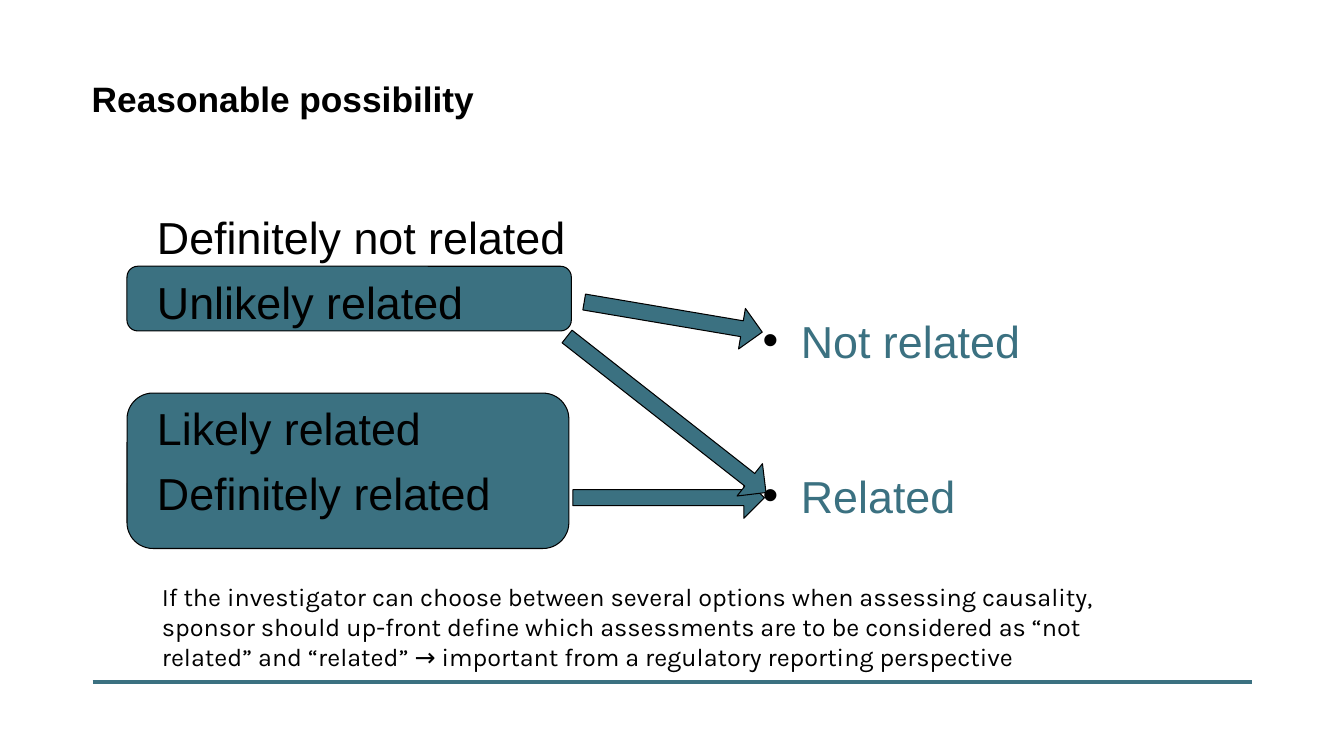
from pptx import Presentation, util as u
from pptx.dml.color import RGBColor
from pptx.enum import shapes, text
from lxml import etree

TEAL = RGBColor(0x3B, 0x71, 0x81)
BLACK = RGBColor(0, 0, 0)
NS = "http://schemas.openxmlformats.org/drawingml/2006/main"

deck = Presentation()
deck.slide_width, deck.slide_height = u.Inches(13.33), u.Inches(7.5)
col, row = deck.slide_width / 160, deck.slide_height / 90
slide = deck.slides.add_slide(deck.slide_layouts[5])


def area(x, y, w, h):
    return int(x * col), int(y * row), int(w * col), int(h * row)


def write(place, lines, size, color, face="Arial", gaps=(), indent=0, bullet=False, lead=1.0):
    frame = slide.shapes.add_textbox(*area(*place)).text_frame
    frame.word_wrap = True
    frame.text = "\n".join(lines)
    for par in frame.paragraphs:
        props = par._p.get_or_add_pPr()
        props.set("marL", str(u.Inches(indent)))
        if bullet:
            props.set("indent", str(-u.Inches(indent)))
            tint = etree.SubElement(props, f"{{{NS}}}buClr")
            etree.SubElement(tint, f"{{{NS}}}srgbClr", val=str(BLACK))
            etree.SubElement(props, f"{{{NS}}}buFont", typeface="Arial")
            etree.SubElement(props, f"{{{NS}}}buChar", char="•")
        par.line_spacing = lead
        par.font.size = u.Pt(size)
        par.font.name = face
        par.font.color.rgb = color
    for par, gap in zip(frame.paragraphs[1:], gaps):
        par.space_before = u.Pt(gap)


title = slide.shapes.title
title.left, title.top, title.width, title.height = area(9.72, 9, 139.3, 6.1)
title.text_frame.text = "Reasonable possibility"
title.text_frame.vertical_anchor = text.MSO_ANCHOR.MIDDLE
head = title.text_frame.paragraphs[0]
head.alignment = text.PP_ALIGN.LEFT
head.line_spacing = 0.9
head.font.size = u.Pt(25.2)
head.font.name = "Arial"
head.font.bold = True
head.font.color.rgb = BLACK

left, top, right, base = area(11.04, 81.24, 149.04, 81.24)
rule = slide.shapes.add_connector(shapes.MSO_CONNECTOR.STRAIGHT, left, top, right, base)
rule.line.color.rgb = TEAL
rule.line.width = u.Pt(3)
etree.SubElement(rule._element.spPr, f"{{{NS}}}effectLst")

box, arrow = shapes.MSO_SHAPE.ROUNDED_RECTANGLE, shapes.MSO_SHAPE.RIGHT_ARROW
blocks = [
    (box, (15.12, 46.8, 52.6, 18.5), 0),
    (box, (15.12, 31.7, 52.9, 7.7), 0),
    (arrow, (68.2, 56.8, 22.8, 4.9), 0),
    (arrow, (69.4, 35.3, 21.5, 4.9), 9.6),
    (arrow, (64.3, 46.9, 30.1, 4.9), 38.1),
]
for kind, place, turn in blocks:
    block = slide.shapes.add_shape(kind, *area(*place))
    block.shadow.inherit = False
    block.fill.solid()
    block.fill.fore_color.rgb = TEAL
    block.line.color.rgb = BLACK
    block.line.width = u.Pt(0.75)
    block.rotation = turn
    if kind == arrow:
        block.adjustments[0] = 0.39

write((14.5, 25.1, 64, 38),
      ["Definitely not related", "Unlikely related", "Likely related", "Definitely related"],
      32, BLACK, gaps=(11.5, 56, 11.5), indent=0.25, lead=0.9)
write((89.6, 36.7, 38.3, 27), ["Not related", "Related"],
      32, TEAL, gaps=(72.5,), indent=0.38, bullet=True)
write((18.1, 68.6, 118.8, 12.1),
      ["If the investigator can choose between several options when assessing causality, "
       "sponsor should up-front define which assessments are to be considered as “not related” "
       "and “related” → important from a regulatory reporting perspective"],
      18, BLACK, "Karla")

deck.save("out.pptx")
